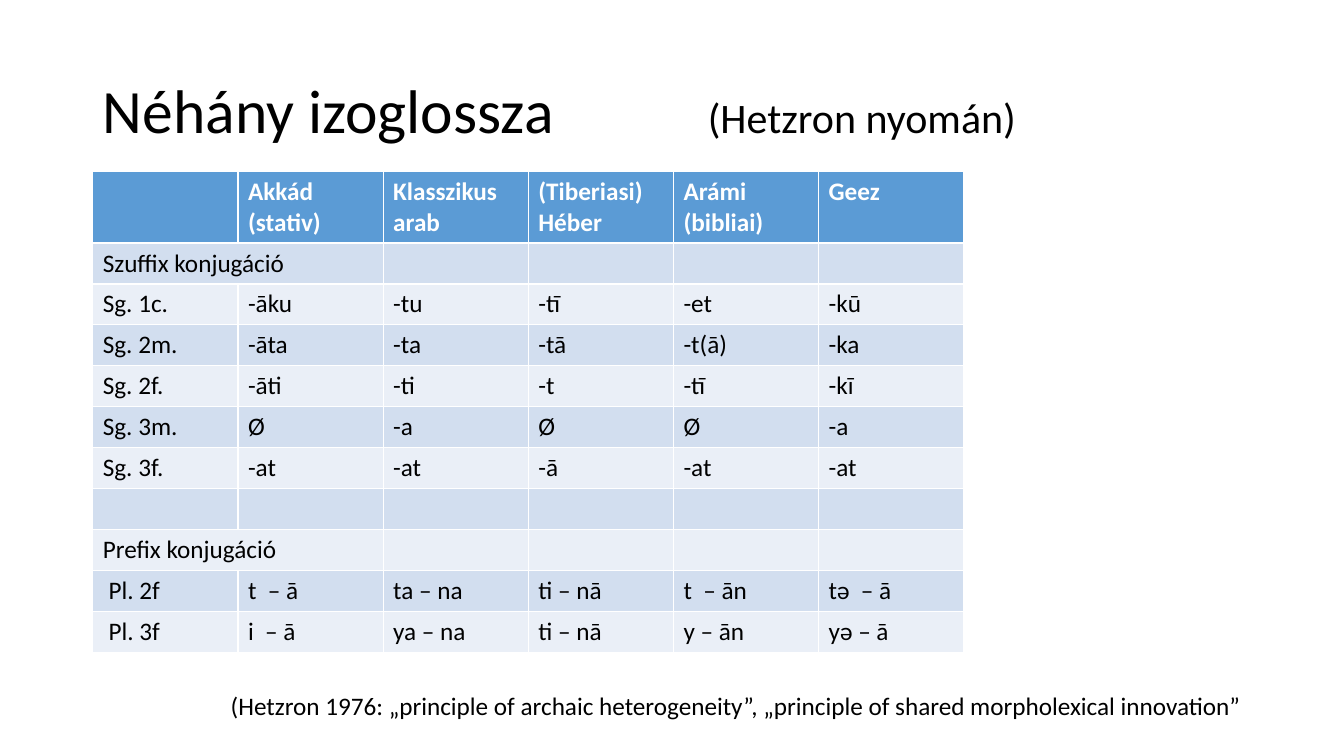
from lxml import etree
from pptx import Presentation
from pptx import util as u
from pptx.dml.color import RGBColor
from pptx.enum import text
from pptx.oxml import ns

FONT = "Calibri"
BLACK = RGBColor(0x00, 0x00, 0x00)
WHITE = RGBColor(0xFF, 0xFF, 0xFF)
HEADER_BLUE = RGBColor(0x5B, 0x9B, 0xD5)
BANDS = [RGBColor(0xD2, 0xDE, 0xEF), RGBColor(0xEA, 0xEF, 0xF7)]

WIDTH, HEIGHT = u.Inches(13.33), u.Inches(7.5)
MARGIN = u.Inches(0.92)
CONTENT_WIDTH = WIDTH - 2 * MARGIN
COLUMN = u.Inches(1.44)
HEADER_ROW = u.Inches(0.7)
TABLE_HEIGHT = u.Inches(4.76)

LANGUAGES = ["", "Akkád\n(stativ)", "Klasszikus\narab", "(Tiberiasi) Héber",
             "Arámi\n(bibliai)", "Geez"]
FORMS = [
    ["Szuffix konjugáció"],
    ["Sg. 1c.", "-āku", "-tu", "-tī", "-et", "-kū"],
    ["Sg. 2m.", "-āta", "-ta", "-tā", "-t(ā)", "-ka"],
    ["Sg. 2f.", "-āti", "-ti", "-t", "-tī", "-kī"],
    ["Sg. 3m.", "Ø", "-a", "Ø", "Ø", "-a"],
    ["Sg. 3f.", "-at", "-at", "-ā", "-at", "-at"],
    [],
    ["Prefix konjugáció"],
    [" Pl. 2f", "t  – ā", "ta – na", "ti – nā", "t  – ān", "tə  – ā"],
    [" Pl. 3f", "i  – ā", "ya – na", "ti – nā", "y – ān", "yə – ā"],
]


def add_span(para, words, size=18, color=BLACK, bold=False):
    span = para.add_run()
    span.text = words
    span.font.name = FONT
    span.font.size = u.Pt(size)
    span.font.bold = bold
    span.font.color.rgb = color


def add_tab_stops(para, inches):
    stops = etree.SubElement(para._p.get_or_add_pPr(), ns.qn("a:tabLst"))
    for position in inches:
        etree.SubElement(stops, ns.qn("a:tab"), pos=str(u.Inches(position)), algn="l")


def place_title(page):
    title = page.shapes.title
    title.left, title.top = MARGIN, u.Inches(0.4)
    title.width, title.height = CONTENT_WIDTH, u.Inches(1.45)
    frame = title.text_frame
    frame.auto_size = text.MSO_AUTO_SIZE.NONE
    frame.vertical_anchor = text.MSO_ANCHOR.MIDDLE
    para = frame.paragraphs[0]
    para.alignment = text.PP_ALIGN.LEFT
    para.line_spacing = 0.9
    add_tab_stops(para, [5, 6])
    add_span(para, "Néhány izoglossza \t\t", 44)
    add_span(para, "(Hetzron nyomán)", 30)


def fill_cell(cell, words, fill, color=BLACK, bold=False):
    cell.fill.solid()
    cell.fill.fore_color.rgb = fill
    frame = cell.text_frame
    for index, line in enumerate(words.split("\n")):
        para = frame.add_paragraph() if index else frame.paragraphs[0]
        para.font.size = u.Pt(18)
        if line:
            add_span(para, line, 18, color, bold)


def add_forms_table(page):
    table = page.shapes.add_table(
        len(FORMS) + 1, len(LANGUAGES), MARGIN, u.Inches(1.7),
        COLUMN * len(LANGUAGES), TABLE_HEIGHT).table
    for column in table.columns:
        column.width = COLUMN
    for row in table.rows:
        row.height = (TABLE_HEIGHT - HEADER_ROW) // len(FORMS)
    table.rows[0].height = HEADER_ROW
    for column, language in enumerate(LANGUAGES):
        fill_cell(table.cell(0, column), language, HEADER_BLUE, WHITE, True)
    for row, forms in enumerate(FORMS, 1):
        padded = forms + [""] * (len(LANGUAGES) - len(forms))
        for column, form in enumerate(padded):
            fill_cell(table.cell(row, column), form, BANDS[(row - 1) % 2])
        if len(forms) == 1:
            table.cell(row, 0).merge(table.cell(row, 1))


def add_source_note(page):
    box = page.shapes.add_textbox(MARGIN, u.Inches(6.8), CONTENT_WIDTH, u.Inches(0.4))
    frame = box.text_frame
    frame.word_wrap = True
    frame.auto_size = text.MSO_AUTO_SIZE.SHAPE_TO_FIT_TEXT
    para = frame.paragraphs[0]
    para.alignment = text.PP_ALIGN.RIGHT
    add_span(para, "(Hetzron 1976: „principle of archaic heterogeneity”, "
                   "„principle of shared morpholexical innovation”")


def main():
    deck = Presentation()
    deck.slide_width, deck.slide_height = WIDTH, HEIGHT
    page = deck.slides.add_slide(deck.slide_layouts[5])
    place_title(page)
    add_forms_table(page)
    add_source_note(page)
    deck.save("out.pptx")


if __name__ == "__main__":
    main()
